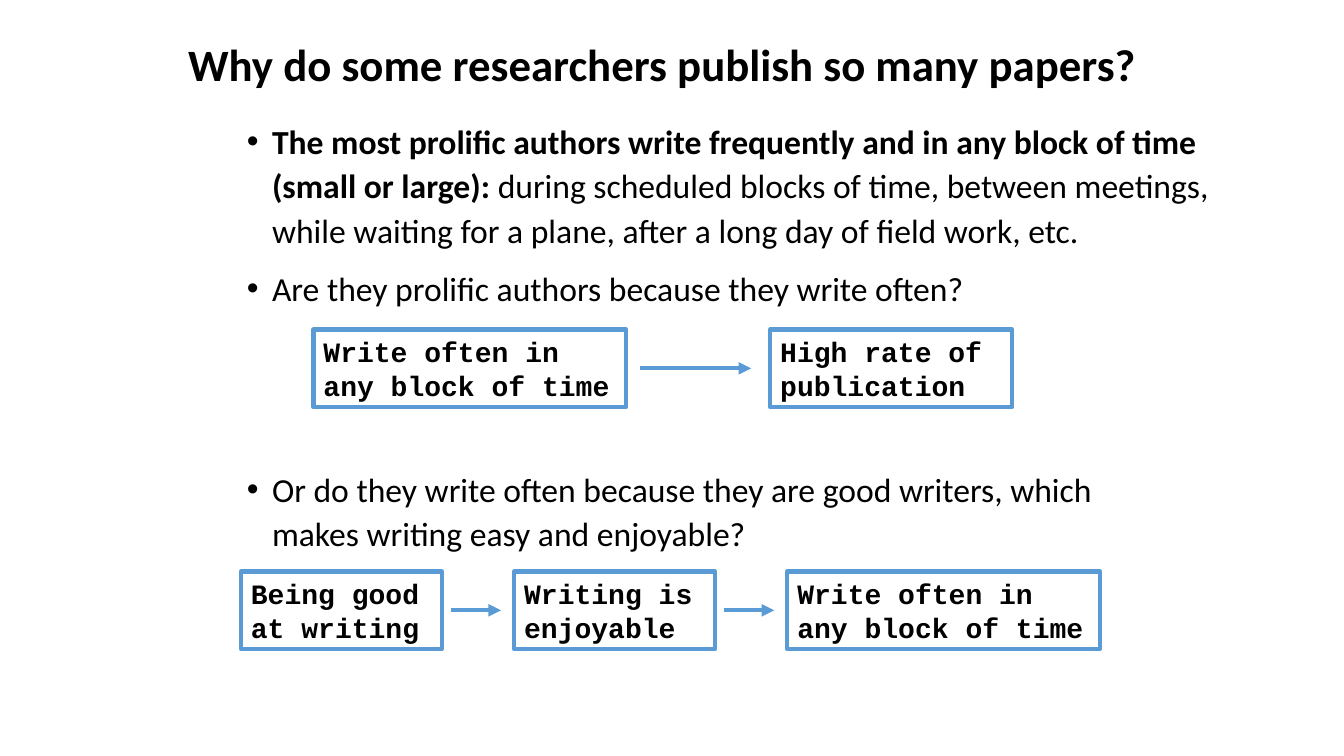
from lxml.etree import SubElement
from pptx import Presentation
from pptx.dml.color import RGBColor
from pptx.enum.shapes import MSO_CONNECTOR, MSO_SHAPE
from pptx.enum.text import MSO_ANCHOR, MSO_AUTO_SIZE, PP_ALIGN
from pptx.oxml.ns import qn
from pptx.util import Inches, Pt

BLACK = "000000"
BLUE = "5B9BD5"
STEP_HEIGHT = 0.77


def color(value):
    return RGBColor.from_string(value)


def add_run(paragraph, text, size, bold=False, font="Calibri"):
    run = paragraph.add_run()
    run.text = text
    run.font.name = font
    run.font.size = Pt(size)
    run.font.bold = bold
    run.font.color.rgb = color(BLACK)


def add_heading(slide, box, text):
    heading = slide.shapes.title
    heading.left, heading.top, heading.width, heading.height = map(Inches, box)
    frame = heading.text_frame
    frame.word_wrap = True
    frame.auto_size = MSO_AUTO_SIZE.NONE
    frame.vertical_anchor = MSO_ANCHOR.MIDDLE
    paragraph = frame.paragraphs[0]
    paragraph.alignment = PP_ALIGN.CENTER
    paragraph.line_spacing = 0.9
    add_run(paragraph, text, 32, bold=True)


def add_bullets(slide, box, points):
    frame = slide.shapes.add_textbox(*map(Inches, box)).text_frame
    frame.word_wrap = True
    for index, point in enumerate(points):
        paragraph = frame.add_paragraph() if index else frame.paragraphs[0]
        paragraph.line_spacing = 1.1
        paragraph.space_before = Pt(10)
        properties = paragraph._p.get_or_add_pPr()
        properties.set("marL", str(Inches(0.25)))
        properties.set("indent", str(Inches(-0.25)))
        SubElement(properties, qn("a:buFont"), typeface="Arial")
        SubElement(properties, qn("a:buChar"), char="•")
        for text, bold in point:
            add_run(paragraph, text, 24, bold)


def add_step(slide, box, text):
    step = slide.shapes.add_shape(MSO_SHAPE.RECTANGLE, *map(Inches, box))
    step.shadow.inherit = False
    step.fill.background()
    step.line.color.rgb = color(BLUE)
    step.line.width = Pt(3)
    frame = step.text_frame
    frame.word_wrap = True
    frame.auto_size = MSO_AUTO_SIZE.SHAPE_TO_FIT_TEXT
    frame.vertical_anchor = MSO_ANCHOR.TOP
    paragraph = frame.paragraphs[0]
    paragraph.alignment = PP_ALIGN.LEFT
    add_run(paragraph, text, 20, bold=True, font="Courier New")


def add_arrow(slide, start, end, y):
    arrow = slide.shapes.add_connector(
        MSO_CONNECTOR.STRAIGHT, Inches(start), Inches(y), Inches(end), Inches(y))
    arrow.line.color.rgb = color(BLUE)
    arrow.line.width = Pt(3)
    SubElement(arrow.line._get_or_add_ln(), qn("a:tailEnd"), type="triangle")
    SubElement(arrow._element.spPr, qn("a:effectLst"))


def add_chain(slide, left, top, steps, gap, arrow_inset, arrow_length):
    for index, (text, width) in enumerate(steps):
        if index:
            start = left - gap + arrow_inset
            add_arrow(slide, start, start + arrow_length, top + STEP_HEIGHT / 2)
        add_step(slide, (left, top, width, STEP_HEIGHT), text)
        left += width + gap


def build_slide(presentation):
    slide = presentation.slides.add_slide(presentation.slide_layouts[5])
    add_heading(slide, (1.6, 0.19, 9.94, 0.95),
                "Why do some researchers publish so many papers?")
    add_bullets(slide, (2.35, 1.11, 10.16, 2.35), [
        [("The most prolific authors write frequently and in any block of time "
          "(small or large): ", True),
         ("during scheduled blocks of time, between meetings, while waiting for "
          "a plane, after a long day of field work, etc.", False)],
        [("Are they prolific authors because they write often?", False)],
    ])
    add_bullets(slide, (2.35, 4.56, 8.62, 1.21), [
        [("Or do they write often because they are good writers, which makes "
          "writing easy and enjoyable?", False)],
    ])
    frequent_writing = ("Write often in any block of time", 3.1)
    add_chain(slide, 3.11, 3.27,
              [frequent_writing, ("High rate of publication", 2.4)],
              gap=1.43, arrow_inset=0.14, arrow_length=1.1)
    add_chain(slide, 2.39, 5.67,
              [("Being good at writing", 1.99), ("Writing is enjoyable", 1.99),
               frequent_writing],
              gap=0.72, arrow_inset=0.09, arrow_length=0.5)


def main():
    presentation = Presentation()
    presentation.slide_width = Inches(13.33)
    presentation.slide_height = Inches(7.5)
    build_slide(presentation)
    presentation.save("out.pptx")


if __name__ == "__main__":
    main()
